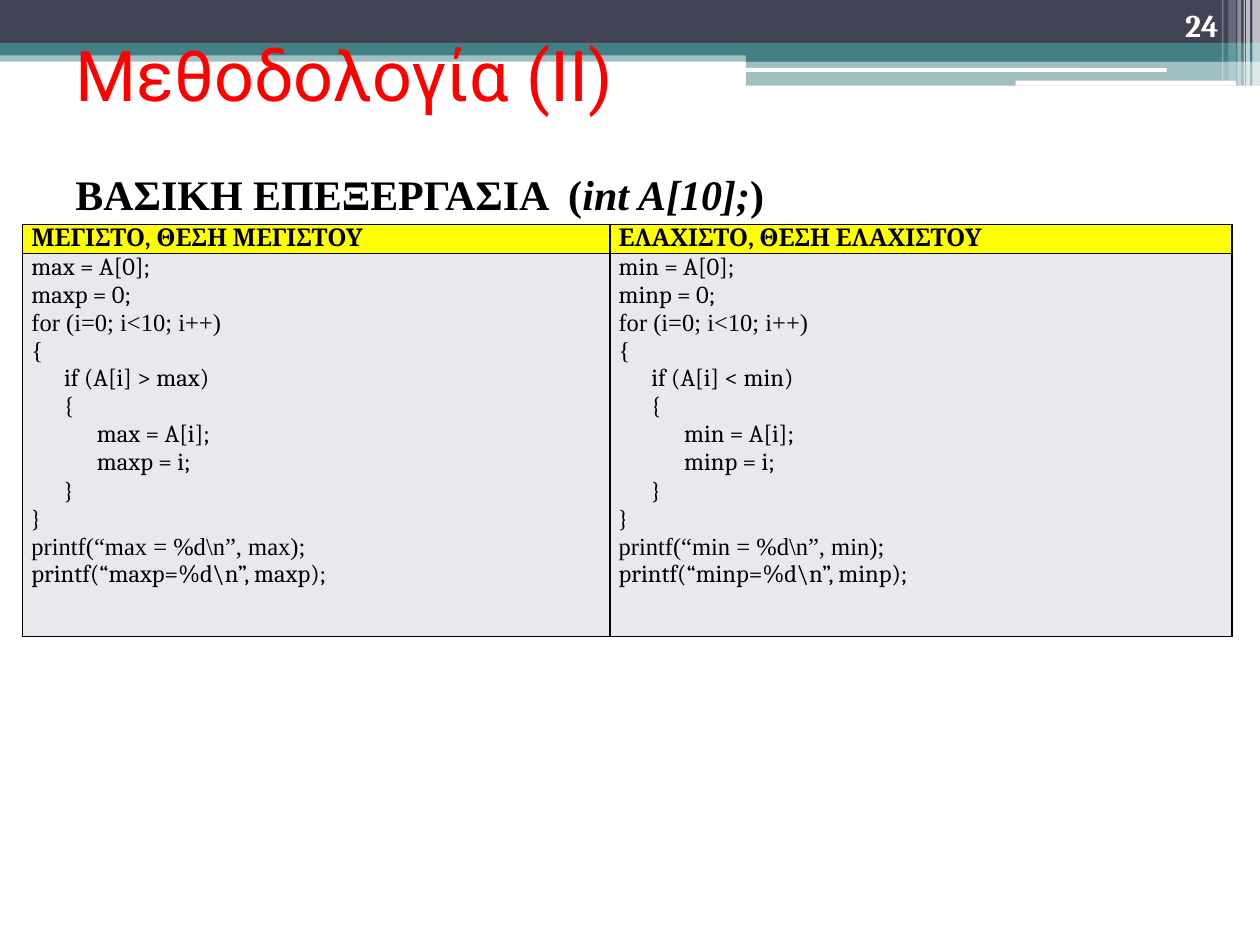
import pptx
import pptx.util
import pptx.dml.color
import pptx.enum.shapes
import pptx.enum.text
import pptx.oxml.ns
from lxml import etree

Inches = pptx.util.Inches
Pt = pptx.util.Pt
RGBColor = pptx.dml.color.RGBColor
ANCHOR = pptx.enum.text.MSO_ANCHOR
SHAPE = pptx.enum.shapes.MSO_SHAPE
qn = pptx.oxml.ns.qn

WHITE = RGBColor(0xFF, 0xFF, 0xFF)
BLACK = RGBColor(0, 0, 0)
RED = RGBColor(0xFF, 0, 0)
YELLOW = RGBColor(0xFF, 0xFF, 0)
SLATE = RGBColor(0x42, 0x44, 0x56)
TEAL = RGBColor(0x43, 0x80, 0x86)
PALE = RGBColor(0xE9, 0xE9, 0xED)
SERIF = "Cambria"
TIMES = "Times New Roman"


def style_run(run, size, name, color, bold=False, italic=False):
    font = run.font
    font.size, font.name, font.bold, font.italic = Pt(size), name, bold, italic
    font.color.rgb = color


def add_borders(cell):
    """Draw a thin black line on all four sides of a table cell."""
    properties = cell._tc.get_or_add_tcPr()
    for side in ("a:lnL", "a:lnR", "a:lnT", "a:lnB"):
        line = etree.SubElement(properties, qn(side), w=str(Pt(1)))
        fill = etree.SubElement(line, qn("a:solidFill"))
        etree.SubElement(fill, qn("a:srgbClr"), val=str(BLACK))


presentation = pptx.Presentation()
presentation.slide_width = Inches(10)
presentation.slide_height = Inches(7.5)
slide = presentation.slides.add_slide(presentation.slide_layouts[5])

# Header band: left, top, width, height, colour, opacity in percent
bars = [
    (0, 0.4, 10, 0.09, TEAL, 50),
    (0, 0, 10, 0.34, SLATE, 100),
    (0, 0.34, 10, 0.1, TEAL, 100),
    (5.92, 0.39, 4.08, 0.1, TEAL, 100),
    (5.92, 0.48, 4.08, 0.2, TEAL, 50),
    (5.91, 0.54, 3.35, 0.03, WHITE, 100),
    (8.06, 0.64, 1.75, 0.04, WHITE, 100),
    (9.94, 0, 0.06, 0.68, WHITE, 65),
    (9.89, 0, 0.03, 0.68, WHITE, 65),
    (9.87, 0, 0.01, 0.68, WHITE, 60),
    (9.82, 0, 0.03, 0.68, WHITE, 40),
    (9.75, 0, 0.06, 0.64, WHITE, 20),
    (9.7, 0, 0.01, 0.64, WHITE, 30),
]
for left, top, width, height, color, opacity in bars:
    is_stripe = color == WHITE and opacity == 100
    bar = slide.shapes.add_shape(
        SHAPE.ROUNDED_RECTANGLE if is_stripe else SHAPE.RECTANGLE,
        Inches(left), Inches(top), Inches(width), Inches(height))
    bar.shadow.inherit = False
    bar.line.fill.background()
    bar.fill.solid()
    bar.fill.fore_color.rgb = color
    if opacity < 100:
        color_element = bar._element.spPr.find(".//" + qn("a:srgbClr"))
        etree.SubElement(color_element, qn("a:alpha"), val=str(opacity * 1000))

# Title, moved in front of the band
title = slide.shapes.title
slide.shapes._spTree.append(title._element)
title.left, title.top, title.width, title.height = Inches(0.5), 0, Inches(9), Inches(1.17)
title.text_frame.text = "Μεθοδολογία (ΙI)"
title.text_frame.vertical_anchor = ANCHOR.MIDDLE
title.text_frame.paragraphs[0].alignment = pptx.enum.text.PP_ALIGN.LEFT
style_run(title.text_frame.paragraphs[0].runs[0], 40, "Roboto", RED)

# Page number
number = slide.shapes.add_textbox(Inches(8.94), 0, Inches(0.83), Inches(0.4))
number.text_frame.word_wrap = True
number.text_frame.vertical_anchor = ANCHOR.BOTTOM
number.text_frame.text = "24"
number.text_frame.paragraphs[0].alignment = pptx.enum.text.PP_ALIGN.RIGHT
style_run(number.text_frame.paragraphs[0].runs[0], 18, SERIF, WHITE, bold=True)

# Subtitle
subtitle = slide.shapes.add_textbox(Inches(0.5), Inches(1.17), Inches(5.77), Inches(0.61))
frame = subtitle.text_frame
frame.word_wrap = False
frame.vertical_anchor = ANCHOR.MIDDLE
frame.margin_top, frame.margin_bottom = Inches(0.17), Inches(0.04)
for text, italic in (("ΒΑΣΙΚΗ ΕΠΕΞΕΡΓΑΣΙΑ  (", False), ("int A[10];", True), (")", False)):
    run = frame.paragraphs[0].add_run()
    run.text = text
    style_run(run, 24, TIMES, BLACK, bold=True, italic=italic)

# Code table: the two columns differ only in variable name and comparison
code = [  # indent level, font, text
    (0, SERIF, "NAME = A[0];"),
    (0, SERIF, "NAMEp = 0;"),
    (0, TIMES, "for (i=0; i<10; i++)"),
    (0, TIMES, "{"),
    (1, SERIF, "if (A[i] SIGN NAME)"),
    (1, SERIF, "{"),
    (2, SERIF, "NAME = A[i];"),
    (2, SERIF, "NAMEp = i;"),
    (1, SERIF, "}"),
    (0, SERIF, "}"),
    (0, TIMES, "printf(“NAME = %d\\n”, NAME);"),
    (0, SERIF, "printf(“NAMEp=%d\\n”, NAMEp);"),
]
columns = [
    ("ΜΕΓΙΣΤΟ, ΘΕΣΗ ΜΕΓΙΣΤΟΥ", "max", ">", 4.66),
    ("ΕΛΑΧΙΣΤΟ, ΘΕΣΗ ΕΛΑΧΙΣΤΟΥ", "min", "<", 4.94),
]
table = slide.shapes.add_table(
    2, 2, Inches(0.18), Inches(1.78), Inches(9.6), Inches(3.27)).table
table.first_row = table.horz_banding = False
table.rows[0].height, table.rows[1].height = Inches(0.23), Inches(3.04)
for index, (heading, name, sign, width) in enumerate(columns):
    table.columns[index].width = Inches(width)
    lines = [(level, font, text.replace("NAME", name).replace("SIGN", sign))
             for level, font, text in code]
    contents = [([(0, SERIF, heading)], YELLOW), (lines, PALE)]
    for row, (cell_lines, fill_color) in enumerate(contents):
        cell = table.cell(row, index)
        add_borders(cell)
        cell.fill.solid()
        cell.fill.fore_color.rgb = fill_color
        cell.margin_left = cell.margin_right = Inches(0.07)
        cell.margin_top = cell.margin_bottom = 0
        cell.text_frame.text = "\n".join(text for _, _, text in cell_lines)
        for paragraph, (level, font, _) in zip(cell.text_frame.paragraphs, cell_lines):
            paragraph._p.get_or_add_pPr().set("marL", str(Inches(0.26 * level)))
            style_run(paragraph.runs[0], 14, font, BLACK, bold=row == 0)

presentation.save("out.pptx")
